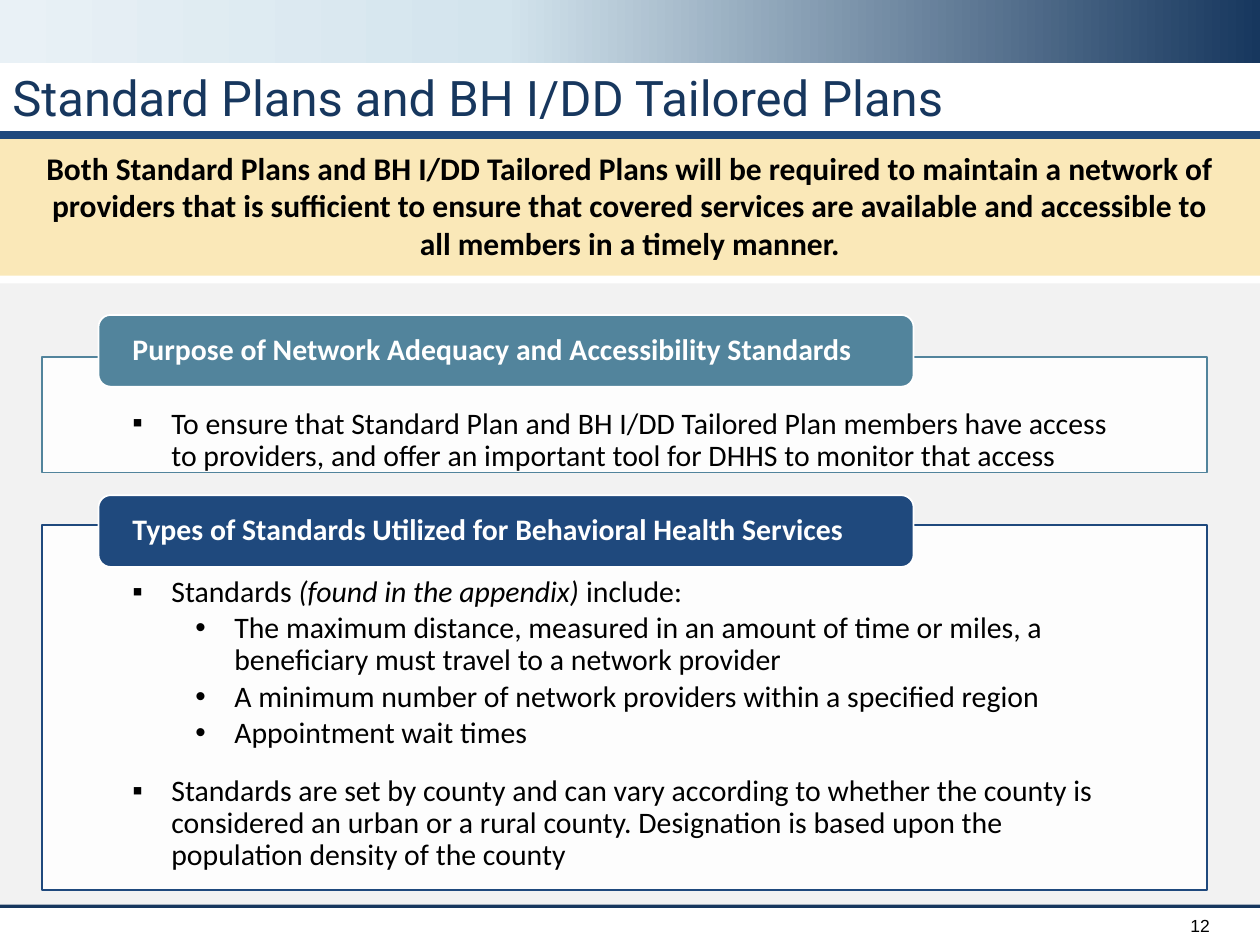
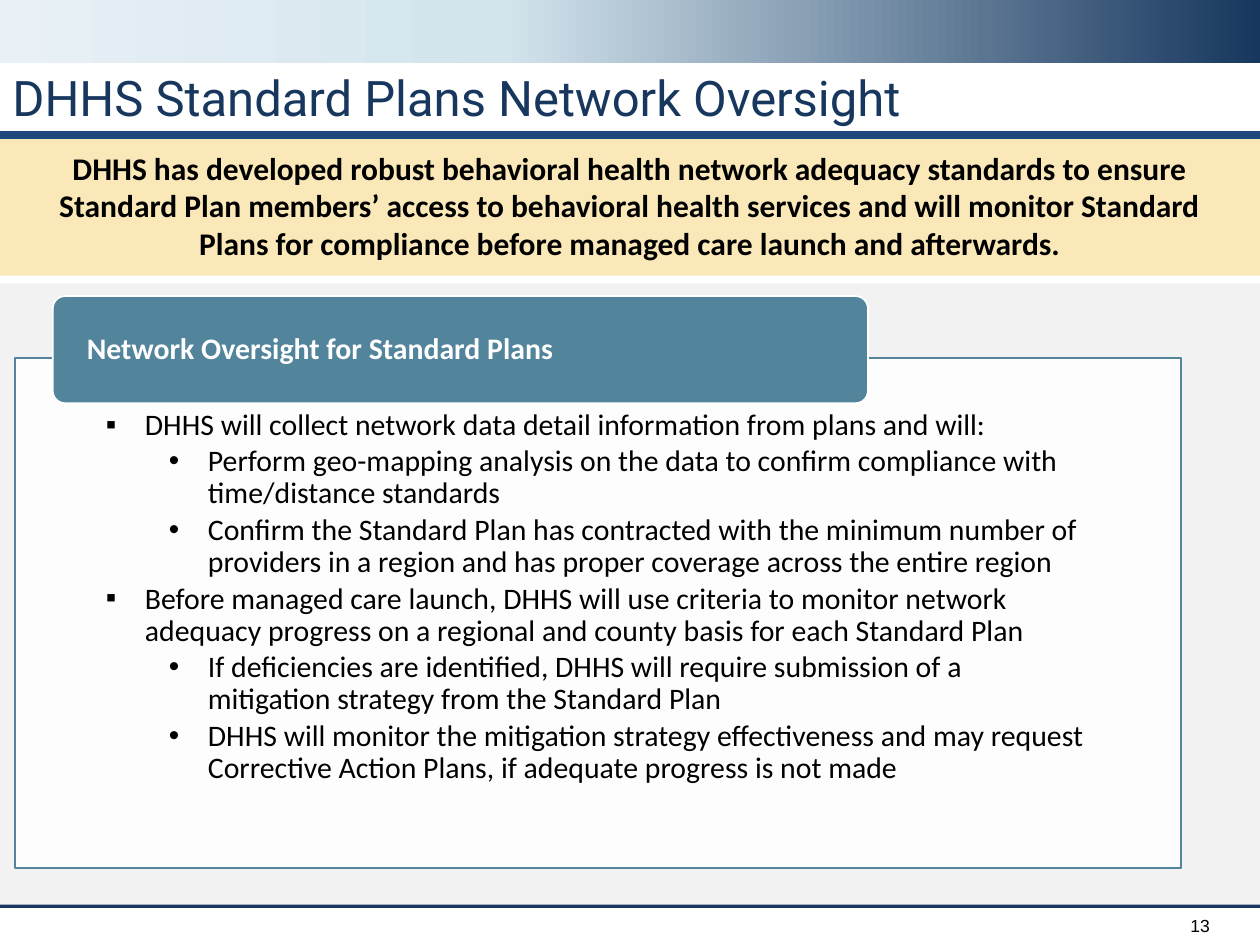
from copy import deepcopy

from lxml.etree import SubElement
from pptx import Presentation
from pptx.dml.color import RGBColor
from pptx.enum.shapes import MSO_CONNECTOR, MSO_SHAPE
from pptx.enum.text import MSO_ANCHOR, PP_ALIGN
from pptx.oxml.ns import qn
from pptx.util import Pt

WIDTH, HEIGHT = 720, 540
NAVY, BLUE, TEAL = "17375E", "1F497D", "52849C"
CREAM, GREY, WHITE, BLACK = "FAE8B8", "F2F2F2", "FFFFFF", "000000"
BAND_STOPS = [(0, NAVY), (0.6, "D3E4ED"), (1, "E9F1F6")]
RULE_Y, FOOTER_Y = 77, 517.7
PANEL_WIDTH, TAB_WIDTH, TAB_RADIUS = 666, 465.8, 7
HANGING = 22.3
BULLETS = {1: ("▪", HANGING), 2: ("•", 58.3)}


def rgb(hex_code):
    return RGBColor.from_string(hex_code)


def add_box(slide, kind, left, top, width, height, fill=None, line=None):
    sp = slide.shapes.add_shape(kind, Pt(left), Pt(top), Pt(width), Pt(height))
    sp.shadow.inherit = False
    if fill:
        sp.fill.solid()
        sp.fill.fore_color.rgb = rgb(fill)
    if line:
        sp.line.color.rgb = rgb(line)
        sp.line.width = Pt(1)
    else:
        sp.line.fill.background()
    return sp


def add_rule(slide, y, color, width):
    line = slide.shapes.add_connector(MSO_CONNECTOR.STRAIGHT, 0, Pt(y), Pt(WIDTH), Pt(y))
    line.line.color.rgb = rgb(color)
    line.line.width = Pt(width)
    SubElement(line._element.spPr, qn("a:effectLst"))


def set_frame(sp, anchor=MSO_ANCHOR.TOP, insets=(7.2, 3.6, 7.2, 3.6)):
    tf = sp.text_frame
    tf.word_wrap = True
    tf.vertical_anchor = anchor
    tf.margin_left, tf.margin_top, tf.margin_right, tf.margin_bottom = map(Pt, insets)
    return tf


def write(p, text, size=17, font="Calibri", color=BLACK, bold=False, italic=False,
          align=PP_ALIGN.LEFT, spacing=0.9):
    """Append one formatted run to the paragraph."""
    p.alignment = align
    p.line_spacing = spacing
    r = p.add_run()
    r.text = text
    r.font.size = Pt(size)
    r.font.name = font
    r.font.color.rgb = rgb(color)
    r.font.bold = bold
    r.font.italic = italic


def add_bullet(p, level):
    char, indent = BULLETS[level]
    pPr = p._p.get_or_add_pPr()
    pPr.set("marL", str(Pt(indent)))
    pPr.set("indent", str(-Pt(HANGING)))
    SubElement(pPr, qn("a:buFont")).set("typeface", "Arial")
    SubElement(pPr, qn("a:buChar")).set("char", char)


def add_band(slide):
    """Draw the gradient strip along the top edge."""
    band = add_box(slide, MSO_SHAPE.RECTANGLE, 0, 0, WIDTH, 36)
    band.fill.gradient()
    band.fill.gradient_angle = 180
    stop_list = next(band._element.spPr.iter(qn("a:gsLst")))
    stop_list.append(deepcopy(stop_list[-1]))
    for stop, (position, color) in zip(band.fill.gradient_stops, BAND_STOPS):
        stop.position = position
        stop.color.rgb = rgb(color)


def add_callout(slide, text):
    sp = add_box(slide, MSO_SHAPE.RECTANGLE, 0, RULE_Y, WIDTH, 80.6, CREAM)
    tf = set_frame(sp, MSO_ANCHOR.MIDDLE, (21.6, 4.3, 21.6, 4.3))
    write(tf.paragraphs[0], text, size=18, bold=True, align=PP_ALIGN.CENTER, spacing=1.0)


def add_panel(slide, left, top, height, color, items):
    """Draw a bordered panel; items are (level, space before, runs), and every
    second run is italic."""
    sp = add_box(slide, MSO_SHAPE.RECTANGLE, left, top, PANEL_WIDTH, height, WHITE, color)
    fill_color = next(sp._element.spPr.iter(qn("a:srgbClr")))
    SubElement(fill_color, qn("a:alpha")).set("val", "90000")
    tf = set_frame(sp, insets=(51.8, 29.5, 51.8, 10))
    for i, (level, before, runs) in enumerate(items):
        p = tf.add_paragraph() if i else tf.paragraphs[0]
        for j, text in enumerate(runs):
            write(p, text, italic=j % 2 == 1)
        p.space_before = Pt(before)
        p.space_after = Pt(2.5)
        add_bullet(p, level)


def add_tab(slide, left, top, height, color, heading):
    sp = add_box(slide, MSO_SHAPE.ROUNDED_RECTANGLE, left, top, TAB_WIDTH, height, color, WHITE)
    sp.adjustments[0] = TAB_RADIUS / height
    tf = set_frame(sp, MSO_ANCHOR.MIDDLE, (17.4, 0, 17.4, 0))
    write(tf.paragraphs[0], heading, color=WHITE, bold=True)


def start_slide(prs, title, number, callout):
    slide = prs.slides.add_slide(prs.slide_layouts[6])
    add_band(slide)
    add_rule(slide, FOOTER_Y, NAVY, 2.25)
    title_box = slide.shapes.add_textbox(0, Pt(38.9), Pt(617.8), Pt(43.2))
    write(set_frame(title_box).paragraphs[0], title, size=28, font="Roboto", color=NAVY)
    number_box = slide.shapes.add_textbox(Pt(653.8), Pt(FOOTER_Y), Pt(44.6), Pt(22.3))
    write(set_frame(number_box, MSO_ANCHOR.MIDDLE).paragraphs[0], str(number),
          size=10, font="Arial", align=PP_ALIGN.RIGHT, spacing=1.0)
    add_box(slide, MSO_SHAPE.RECTANGLE, 0, 162, WIDTH, 355, GREY)
    add_callout(slide, callout)
    add_rule(slide, RULE_Y, BLUE, 4.5)
    return slide


def build_plans_slide(prs):
    slide = start_slide(
        prs, "Standard Plans and BH I/DD Tailored Plans", 12,
        "Both Standard Plans and BH I/DD Tailored Plans will be required to maintain a "
        "network of providers that is sufficient to ensure that covered services are "
        "available and accessible to all members in a timely manner.")
    add_panel(slide, 23.8, 203.8, 66.2, TEAL, [
        (1, 0, ["To ensure that Standard Plan and BH I/DD Tailored Plan members have access "
                "to providers, and offer an important tool for DHHS to monitor that access"]),
    ])
    add_tab(slide, 56.3, 180, 41, TEAL,
            "Purpose of Network Adequacy and Accessibility Standards")
    add_panel(slide, 23.8, 300, 208.8, BLUE, [
        (1, 0, ["Standards ", "(found in the appendix)", " include:"]),
        (2, 0, ["The maximum distance, measured in an amount of time or miles, a "
                "beneficiary must travel to a network provider"]),
        (2, 0, ["A minimum number of network providers within a specified region"]),
        (2, 0, ["Appointment wait times"]),
        (1, 12, ["Standards are set by county and can vary according to whether the county is "
                 "considered an urban or a rural county. Designation is based upon the "
                 "population density of the county"]),
    ])
    add_tab(slide, 56.3, 283, 41, BLUE,
            "Types of Standards Utilized for Behavioral Health Services")


def build_oversight_slide(prs):
    slide = start_slide(
        prs, "DHHS Standard Plans Network Oversight", 13,
        "DHHS has developed robust behavioral health network adequacy standards to ensure "
        "Standard Plan members’ access to behavioral health services and will monitor "
        "Standard Plans for compliance before managed care launch and afterwards.")
    add_panel(slide, 8.7, 204.5, 291.6, TEAL, [
        (1, 0, ["DHHS will collect network data detail information from plans and will:"]),
        (2, 0, ["Perform geo-mapping analysis on the data to confirm compliance with "
                "time/distance standards"]),
        (2, 0, ["Confirm the Standard Plan has contracted with the minimum number of "
                "providers in a region and has proper coverage across the entire region"]),
        (1, 0, ["Before managed care launch, DHHS will use criteria to monitor network "
                "adequacy progress on a regional and county basis for each Standard Plan"]),
        (2, 0, ["If deficiencies are identified, DHHS will require submission of a "
                "mitigation strategy from the Standard Plan"]),
        (2, 0, ["DHHS will monitor the mitigation strategy effectiveness and may request "
                "Corrective Action Plans, if adequate progress is not made"]),
    ])
    add_tab(slide, 30.2, 169.2, 61.2, TEAL, "Network Oversight for Standard Plans")


def main():
    prs = Presentation()
    prs.slide_width, prs.slide_height = Pt(WIDTH), Pt(HEIGHT)
    build_plans_slide(prs)
    build_oversight_slide(prs)
    prs.save("out.pptx")


if __name__ == "__main__":
    main()
